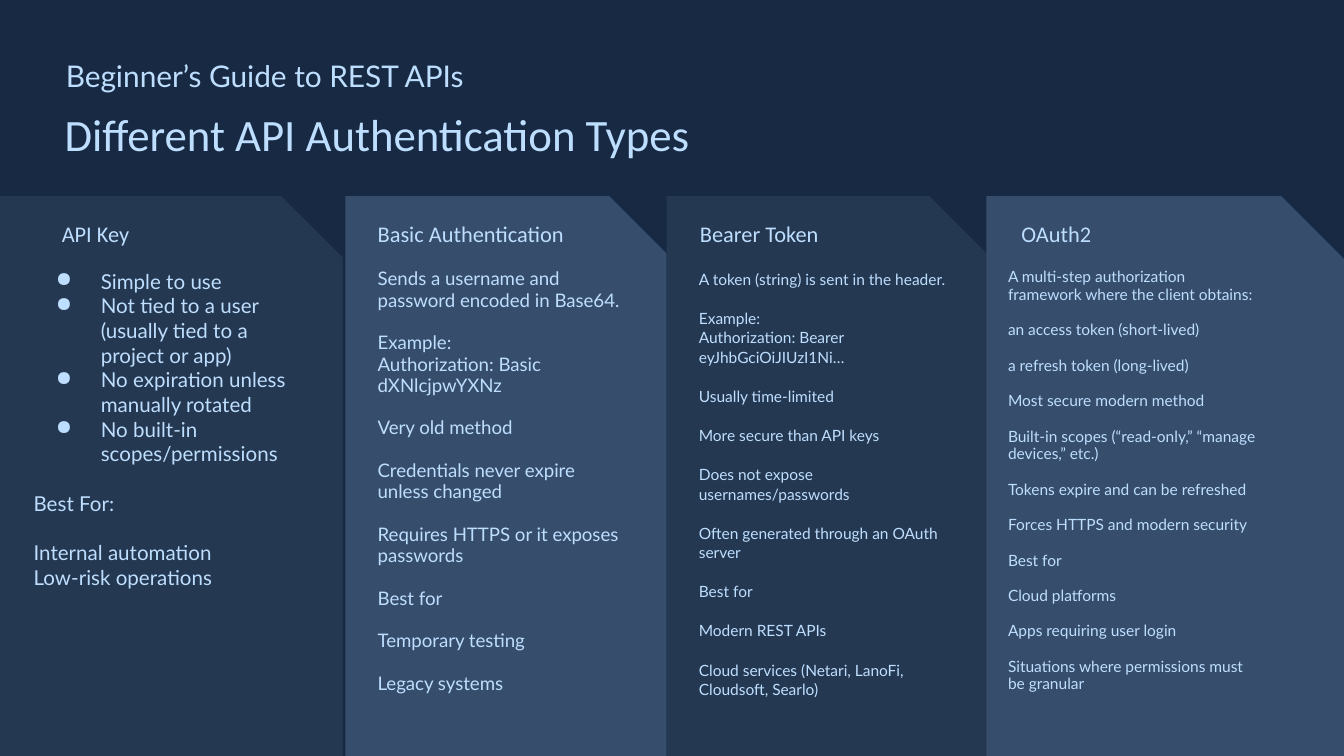
from dataclasses import dataclass
from lxml.etree import SubElement
from pptx import Presentation
from pptx.dml.color import RGBColor
from pptx.enum.shapes import MSO_SHAPE
from pptx.enum.text import MSO_ANCHOR
from pptx.oxml.ns import qn
from pptx.util import Pt

COLORS = {
    "background": "182A43",
    "dark": "253851",
    "light": "364D6C",
    "text": "BEDEFF",
}
PANEL_TOP, PANEL_HEIGHT = 105.1, 301
HEADING_TOP, HEADING_HEIGHT = 112.3, 23.8
BODY_TOP = 144


@dataclass
class Column:
    heading: str
    panel: tuple
    color: str
    heading_box: tuple
    body_box: tuple
    size: float
    spacing: float
    blocks: list
    bulleted_blocks: int = 0


COLUMNS = [
    Column("API Key", (-1.4, 185), "dark", (33.1, 126), (18, 149.8, 185), 11, 1, [
        "Simple to use\n"
        "Not tied to a user (usually tied to a project or app)\n"
        "No expiration unless manually rotated\n"
        "No built-in scopes/permissions",
        "Best For:",
        "Internal automation\nLow-risk operations",
    ], bulleted_blocks=1),
    Column("Basic Authentication", (185, 172.1), "light", (202.3, 135.4), (202.3, 135.4, 218.2), 10, 0.95, [
        "Sends a username and password encoded in Base64.",
        "Example:\nAuthorization: Basic dXNlcjpwYXNz",
        "Very old method",
        "Credentials never expire unless changed",
        "Requires HTTPS or it exposes passwords",
        "Best for",
        "Temporary testing",
        "Legacy systems",
    ]),
    Column("Bearer Token", (357.1, 171.4), "dark", (375, 135.4), (374.4, 135.4, 234.7), 8.3, 1.05, [
        "A token (string) is sent in the header.",
        "Example:\nAuthorization: Bearer eyJhbGciOiJIUzI1Ni…",
        "Usually time-limited",
        "More secure than API keys",
        "Does not expose usernames/passwords",
        "Often generated through an OAuth server",
        "Best for",
        "Modern REST APIs",
        "Cloud services (Netari, LanoFi, Cloudsoft, Searlo)",
    ]),
    Column("OAuth2", (528.5, 192.2), "light", (547.2, 135.4), (540, 135.4, 234.7), 8.3, 0.95, [
        "A multi-step authorization framework where the client obtains:",
        "an access token (short-lived)",
        "a refresh token (long-lived)",
        "Most secure modern method",
        "Built-in scopes (“read-only,” “manage devices,” etc.)",
        "Tokens expire and can be refreshed",
        "Forces HTTPS and modern security",
        "Best for",
        "Cloud platforms",
        "Apps requiring user login",
        "Situations where permissions must be granular",
    ]),
]


def rgb(name):
    return RGBColor.from_string(COLORS[name])


def add_text_frame(slide, left, top, width, height, right_inset=0, anchor=MSO_ANCHOR.TOP):
    frame = slide.shapes.add_textbox(Pt(left), Pt(top), Pt(width), Pt(height)).text_frame
    frame.word_wrap = True
    frame.vertical_anchor = anchor
    frame.margin_left = frame.margin_top = frame.margin_bottom = 0
    frame.margin_right = Pt(right_inset)
    return frame


def write_line(paragraph, text, size, font, spacing):
    paragraph.line_spacing = spacing
    run = paragraph.add_run()
    run.text = text
    run.font.size = Pt(size)
    run.font.name = font
    run.font.color.rgb = rgb("text")


def add_heading(slide, text, box, size, font, spacing, anchor=MSO_ANCHOR.TOP):
    frame = add_text_frame(slide, *box, right_inset=7.2, anchor=anchor)
    write_line(frame.paragraphs[0], text, size, font, spacing)


def add_bullet(paragraph):
    properties = paragraph._p.get_or_add_pPr()
    properties.set("marL", str(Pt(36)))
    properties.set("indent", str(-Pt(24)))
    bullet_color = SubElement(properties, qn("a:buClr"))
    SubElement(bullet_color, qn("a:srgbClr"), val=COLORS["text"])
    SubElement(properties, qn("a:buChar"), char="●")


def add_panel(slide, column):
    left, width = column.panel
    panel = slide.shapes.add_shape(
        MSO_SHAPE.SNIP_1_RECTANGLE, Pt(left), Pt(PANEL_TOP), Pt(width), Pt(PANEL_HEIGHT))
    panel.adjustments[0] = 0.178
    panel.shadow.inherit = False
    panel.fill.solid()
    panel.fill.fore_color.rgb = rgb(column.color)
    panel.line.fill.background()


def add_body(slide, column):
    left, width, height = column.body_box
    frame = add_text_frame(slide, left, BODY_TOP, width, height)
    block_gap = Pt(round(column.size * 1.2 * column.spacing, 1))
    paragraph = frame.paragraphs[0]
    for block_index, block in enumerate(column.blocks):
        for line_index, line in enumerate(block.split("\n")):
            if block_index or line_index:
                paragraph = frame.add_paragraph()
            write_line(paragraph, line, column.size, "Lato", column.spacing)
            if block_index and not line_index:
                paragraph.space_before = block_gap
            if block_index < column.bulleted_blocks:
                add_bullet(paragraph)


def add_column(slide, column):
    add_panel(slide, column)
    left, width = column.heading_box
    add_heading(slide, column.heading, (left, HEADING_TOP, width, HEADING_HEIGHT),
                12, "Calibri", 1.15, MSO_ANCHOR.MIDDLE)
    add_body(slide, column)


def main():
    presentation = Presentation()
    presentation.slide_width, presentation.slide_height = Pt(720), Pt(405)
    slide = presentation.slides.add_slide(presentation.slide_layouts[6])
    slide.background.fill.solid()
    slide.background.fill.fore_color.rgb = rgb("background")
    add_heading(slide, "Different API Authentication Types", (34.6, 60.5, 407.5, 31), 24, "Calibri", 0.9)
    add_heading(slide, "Beginner’s Guide to REST APIs", (35.3, 31, 420.5, 25.2), 16, "Lato", 1)
    for column in COLUMNS:
        add_column(slide, column)
    presentation.save("out.pptx")


if __name__ == "__main__":
    main()
